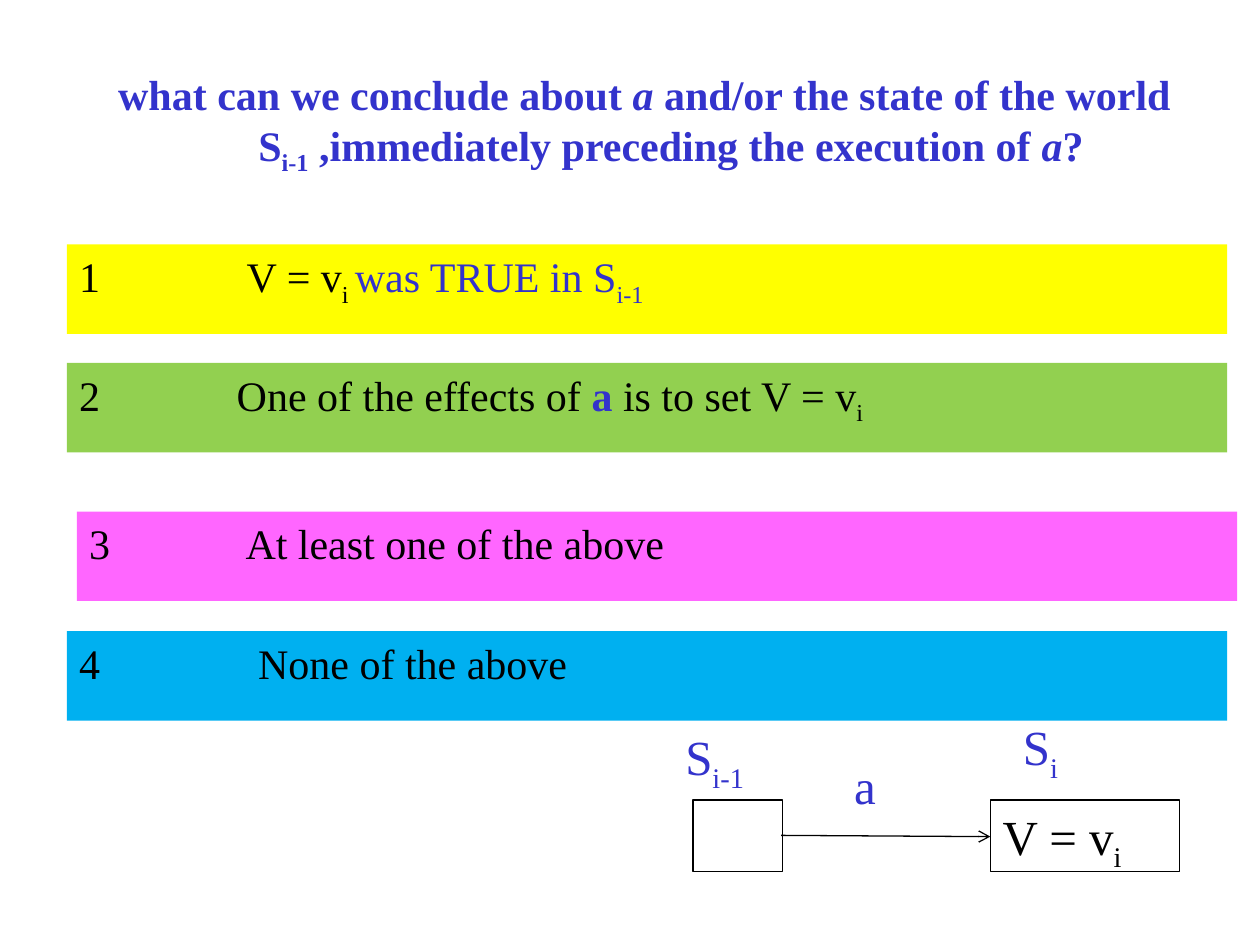
"""Build a quiz slide about an action, with four answers and a state diagram."""
import pptx
import pptx.dml.color
import pptx.enum.shapes
import pptx.enum.text
import pptx.oxml.ns
import pptx.util
from lxml import etree

Inches = pptx.util.Inches
Pt = pptx.util.Pt
RGBColor = pptx.dml.color.RGBColor
MSO_SHAPE = pptx.enum.shapes.MSO_SHAPE
qn = pptx.oxml.ns.qn

COLORS = {
    "ink": "000000",
    "accent": "3333CC",
    "yellow": "FFFF00",
    "green": "92D050",
    "pink": "FF66FF",
    "blue": "00B0F0",
}
SUB = {"subscript": True}
ACCENT = {"color": "accent"}
ACCENT_SUB = {"color": "accent", "subscript": True}


def write_runs(paragraph, runs, **base):
    """Add formatted runs to a paragraph."""
    for text, changes in runs:
        style = {"name": "Times New Roman", "color": "ink", **base, **changes}
        color = style.pop("color")
        subscript = style.pop("subscript", False)
        run = paragraph.add_run()
        run.text = text
        for attribute, value in style.items():
            setattr(run.font, attribute, value)
        run.font.color.rgb = RGBColor.from_string(COLORS[color])
        if subscript:
            run._r.get_or_add_rPr().set("baseline", "-25000")


def set_indent(paragraph, margin, first_line):
    """Set the left margin and first-line indent of a paragraph."""
    properties = paragraph._p.get_or_add_pPr()
    properties.set("marL", str(Inches(margin)))
    properties.set("indent", str(Inches(first_line)))


presentation = pptx.Presentation()
presentation.slide_width = Inches(10)
presentation.slide_height = Inches(7.5)
slide = presentation.slides.add_slide(presentation.slide_layouts[5])

title = slide.shapes.title
title_box = {"left": 0.2, "top": 0.6, "width": 9.33, "height": 0.75}
for attribute, value in title_box.items():
    setattr(title, attribute, Inches(value))
title_format = {
    "word_wrap": True,
    "auto_size": pptx.enum.text.MSO_AUTO_SIZE.NONE,
    "vertical_anchor": pptx.enum.text.MSO_ANCHOR.MIDDLE,
}
for attribute, value in title_format.items():
    setattr(title.text_frame, attribute, value)
question = title.text_frame.paragraphs[0]
question.alignment = pptx.enum.text.PP_ALIGN.CENTER
set_indent(question, 0.92, -0.42)
question_runs = [
    ("what can we conclude about ", {}),
    ("a", {"italic": True}),
    (" and/or the state of the world S", {}),
    ("i-1", SUB),
    (" ,immediately preceding the execution of ", {}),
    ("a", {"italic": True}),
    ("?", {}),
]
write_runs(question, question_runs, size=Pt(24), bold=True, color="accent")

answers = [
    (0.53, 1.94, "yellow", 1.33,
     [("V = v", {}), ("i ", SUB), ("was TRUE in S", ACCENT), ("i-1", ACCENT_SUB)]),
    (0.53, 2.88, "green", 1.25,
     [("One of the effects of ", {}), ("a", {"color": "accent", "bold": True}),
      (" is to set V = v", {}), ("i", SUB)]),
    (0.61, 4.06, "pink", 1.24, [("At least one of the above", {})]),
    (0.53, 5.01, "blue", 1.42, [("None of the above", {})]),
]
for number, (left, top, fill, indent, runs) in enumerate(answers, 1):
    bar = slide.shapes.add_shape(
        MSO_SHAPE.RECTANGLE, Inches(left), Inches(top), Inches(9.21), Inches(0.71))
    bar.shadow.inherit = False
    bar.fill.solid()
    bar.fill.fore_color.rgb = RGBColor.from_string(COLORS[fill])
    bar.line.fill.background()
    bar.text_frame.vertical_anchor = pptx.enum.text.MSO_ANCHOR.TOP
    paragraph = bar.text_frame.paragraphs[0]
    paragraph.alignment = pptx.enum.text.PP_ALIGN.LEFT
    paragraph.space_before = Pt(4.8)
    set_indent(paragraph, indent, -indent)
    write_runs(paragraph, [(f"{number}\t", {})] + runs, size=Pt(24))

states = [
    (5.5, 0.71, []),
    (7.86, 1.5, [("V = v", {}), ("i", SUB)]),
]
for left, width, runs in states:
    state = slide.shapes.add_shape(
        MSO_SHAPE.RECTANGLE, Inches(left), Inches(6.35), Inches(width), Inches(0.57))
    state.shadow.inherit = False
    state.fill.background()
    state.line.color.rgb = RGBColor.from_string(COLORS["ink"])
    state.line.width = Pt(0.75)
    state.text_frame.vertical_anchor = pptx.enum.text.MSO_ANCHOR.TOP
    paragraph = state.text_frame.paragraphs[0]
    paragraph.alignment = pptx.enum.text.PP_ALIGN.LEFT
    write_runs(paragraph, runs, size=Pt(28))

arrow = slide.shapes.add_connector(
    pptx.enum.shapes.MSO_CONNECTOR.STRAIGHT,
    Inches(6.2), Inches(6.63), Inches(7.86), Inches(6.64))
arrow.line.color.rgb = RGBColor.from_string(COLORS["ink"])
arrow.line.width = Pt(0.75)
etree.SubElement(arrow.line._get_or_add_ln(), qn("a:tailEnd"), type="arrow")
etree.SubElement(arrow._element.spPr, qn("a:effectLst"))

labels = [
    (5.34, 5.72, 0.71, [("S", {}), ("i-1", SUB)]),
    (8.02, 5.64, 0.49, [("S", {}), ("i", SUB)]),
    (6.68, 5.95, 0.38, [("a", {})]),
]
for left, top, width, runs in labels:
    label = slide.shapes.add_textbox(
        Inches(left), Inches(top), Inches(width), Inches(0.57))
    label.text_frame.word_wrap = False
    label.text_frame.auto_size = pptx.enum.text.MSO_AUTO_SIZE.SHAPE_TO_FIT_TEXT
    write_runs(label.text_frame.paragraphs[0], runs, size=Pt(28), color="accent")

presentation.save("out.pptx")
